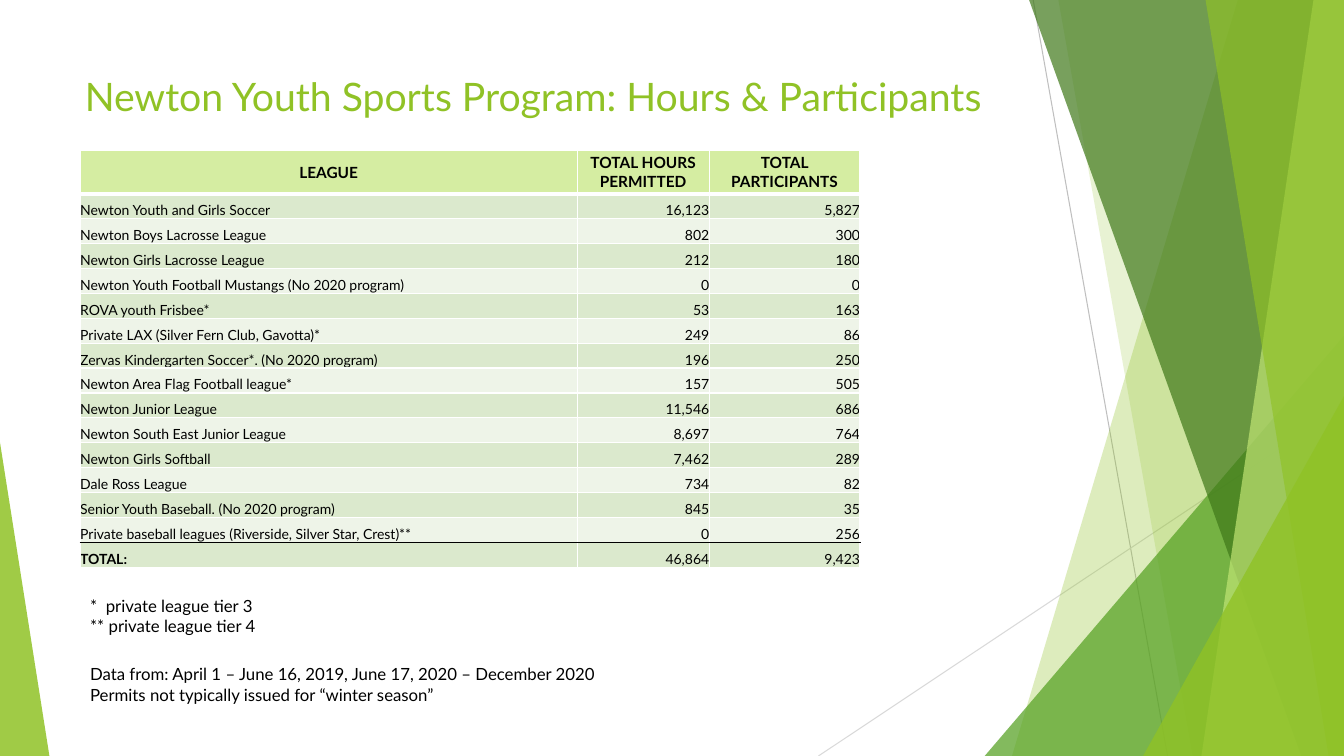
"""Build the youth sports hours and participants slide."""
from lxml import etree
from pptx import Presentation
from pptx.dml.color import RGBColor
from pptx.enum.shapes import MSO_CONNECTOR, MSO_SHAPE
from pptx.enum.text import MSO_ANCHOR, PP_ALIGN
from pptx.oxml import parse_xml
from pptx.oxml.ns import nsdecls, qn
from pptx.util import Pt

TITLE = "Newton Youth Sports Program: Hours & Participants"
TIERS = ["*  private league tier 3", "** private league tier 4"]
SOURCES = [
    "Data from: April 1 – June 16, 2019, June 17, 2020 – December 2020",
    "Permits not typically issued for “winter season”",
]
ROWS = [
    ("LEAGUE", "TOTAL HOURS PERMITTED", "TOTAL PARTICIPANTS"),
    ("Newton Youth and Girls Soccer", "16,123", "5,827"),
    ("Newton Boys Lacrosse League", "802", "300"),
    ("Newton Girls Lacrosse League", "212", "180"),
    ("Newton Youth Football Mustangs (No 2020 program)", "0", "0"),
    ("ROVA youth Frisbee*", "53", "163"),
    ("Private LAX (Silver Fern Club, Gavotta)*", "249", "86"),
    ("Zervas Kindergarten Soccer*. (No 2020 program)", "196", "250"),
    ("Newton Area Flag Football league*", "157", "505"),
    ("Newton Junior League", "11,546", "686"),
    ("Newton South East Junior League", "8,697", "764"),
    ("Newton Girls Softball", "7,462", "289"),
    ("Dale Ross League", "734", "82"),
    ("Senior Youth Baseball. (No 2020 program)", "845", "35"),
    ("Private baseball leagues (Riverside, Silver Star, Crest)**", "0", "256"),
    ("TOTAL:", "46,864", "9,423"),
]

WHITE = RGBColor(0xFF, 0xFF, 0xFF)
BLACK = RGBColor(0x00, 0x00, 0x00)
LIME = RGBColor(0x90, 0xC2, 0x26)
GREEN = RGBColor(0x54, 0xA0, 0x21)
FOREST = RGBColor(0x3F, 0x78, 0x19)
PALE_LIME = RGBColor(0xC0, 0xE4, 0x74)
HEADER_FILL = RGBColor(0xD5, 0xED, 0xA2)
ODD_FILL = RGBColor(0xDB, 0xE9, 0xCD)
EVEN_FILL = RGBColor(0xEE, 0xF4, 0xE8)
GRAY = RGBColor(0xBF, 0xBF, 0xBF)
LIGHT_GRAY = RGBColor(0xD9, 0xD9, 0xD9)

FONT = "Lato"
WIDTH, HEIGHT = 960, 540
MARGIN = 57.3
TABLE_TOP = 107.5
COLUMNS = [355, 94.3, 107.7]
HEADER_HEIGHT, ROW_HEIGHT = 31, 17.8

HAIRLINES = [((738, 0), (834, HEIGHT), GRAY), ((WIDTH, 290), (584.6, HEIGHT), LIGHT_GRAY)]
BAND, WEDGE = "band", "wedge"
FACETS = [
    (BAND, (884.2, 722.9), LIME, 30),
    (BAND, (756, 851.8), LIME, 20),
    (WEDGE, (703.4, 239.8, 256.6, 1), GREEN, 72),
    (BAND, (735.1, 929.5), FOREST, 70),
    (BAND, (938.2, 858.2), PALE_LIME, 70),
    (BAND, (861.1, 949), LIME, 65),
    (WEDGE, (816.5, 283, 143.5, 1), LIME, 80),
    (WEDGE, (0, 316.1, 35.3, 0), LIME, 85),
]


def add_hairline(shapes, start, end, color):
    line = shapes.add_connector(MSO_CONNECTOR.STRAIGHT, *map(Pt, start + end))
    line.line.color.rgb = color
    line.line.width = Pt(0.75)
    etree.SubElement(line._element.spPr, qn("a:effectLst"))


def add_facet(shapes, kind, geometry, color, opacity):
    if kind == BAND:
        top_x, bottom_x = geometry
        builder = shapes.build_freeform(Pt(top_x), 0)
        corners = [(WIDTH, 0), (WIDTH, HEIGHT), (bottom_x, HEIGHT)]
        builder.add_line_segments([(Pt(x), Pt(y)) for x, y in corners], close=True)
        sp = builder.convert_to_shape()
    else:
        left, top, width, apex = geometry
        sp = shapes.add_shape(MSO_SHAPE.ISOSCELES_TRIANGLE, Pt(left), Pt(top),
                              Pt(width), Pt(HEIGHT - top))
        sp.adjustments[0] = apex
    sp.shadow.inherit = False
    sp.line.fill.background()
    sp.fill.solid()
    sp.fill.fore_color.rgb = color
    tint = sp._element.spPr.find(qn("a:solidFill"))[0]
    etree.SubElement(tint, qn("a:alpha"), val=str(opacity * 1000))


def add_run(p, text, size, color=BLACK, bold=False):
    r = p.add_run()
    r.text = text
    r.font.name, r.font.size, r.font.bold = FONT, Pt(size), bold
    r.font.color.rgb = color


def add_text(shapes, box, lines, size, color=BLACK, wrap=False):
    tf = shapes.add_textbox(*map(Pt, box)).text_frame
    tf.word_wrap = wrap
    for i, line in enumerate(lines):
        p = tf.paragraphs[0] if i == 0 else tf.add_paragraph()
        add_run(p, line, size, color)


def rule_at(boundary):
    if boundary == 1:
        return WHITE, 3
    return (BLACK if boundary == len(ROWS) - 1 else WHITE), 1


def set_borders(cell, row):
    side = (WHITE, 1)
    edges = {"lnL": side, "lnR": side, "lnT": rule_at(row), "lnB": rule_at(row + 1)}
    tc_pr = cell._tc.get_or_add_tcPr()
    for i, (tag, (color, width)) in enumerate(edges.items()):
        tc_pr.insert(i, parse_xml(
            f'<a:{tag} {nsdecls("a")} w="{Pt(width)}"><a:solidFill>'
            f'<a:srgbClr val="{color}"/></a:solidFill></a:{tag}>'))


def fill_cell(cell, row, col, text):
    header = row == 0
    cell.margin_left = cell.margin_right = cell.margin_top = cell.margin_bottom = 0
    cell.vertical_anchor = MSO_ANCHOR.MIDDLE if header else MSO_ANCHOR.BOTTOM
    cell.fill.solid()
    cell.fill.fore_color.rgb = HEADER_FILL if header else ODD_FILL if row % 2 else EVEN_FILL
    set_borders(cell, row)
    p = cell.text_frame.paragraphs[0]
    p.alignment = PP_ALIGN.CENTER if header else PP_ALIGN.RIGHT if col else PP_ALIGN.LEFT
    total_label = row == len(ROWS) - 1 and col == 0
    add_run(p, text, 11 if header else 10, bold=header or total_label)


def add_league_table(shapes):
    heights = [HEADER_HEIGHT] + [ROW_HEIGHT] * (len(ROWS) - 1)
    box = (MARGIN, TABLE_TOP, sum(COLUMNS), sum(heights))
    table = shapes.add_table(len(ROWS), len(COLUMNS), *map(Pt, box)).table
    for column, width in zip(table.columns, COLUMNS):
        column.width = Pt(width)
    for row, (height, values) in enumerate(zip(heights, ROWS)):
        table.rows[row].height = Pt(height)
        for col, text in enumerate(values):
            fill_cell(table.cell(row, col), row, col, text)


def main():
    prs = Presentation()
    prs.slide_width, prs.slide_height = Pt(WIDTH), Pt(HEIGHT)
    shapes = prs.slides.add_slide(prs.slide_layouts[6]).shapes
    for hairline in HAIRLINES:
        add_hairline(shapes, *hairline)
    for facet in FACETS:
        add_facet(shapes, *facet)
    add_text(shapes, (53.5, 48.2, 676.8, 43.9), [TITLE], 28, LIME, wrap=True)
    add_text(shapes, (MARGIN, 470.9, 377.3, 36), SOURCES, 12)
    add_league_table(shapes)
    add_text(shapes, (MARGIN, 421.9, 137.5, 36), TIERS, 12)
    prs.save("out.pptx")


if __name__ == "__main__":
    main()
